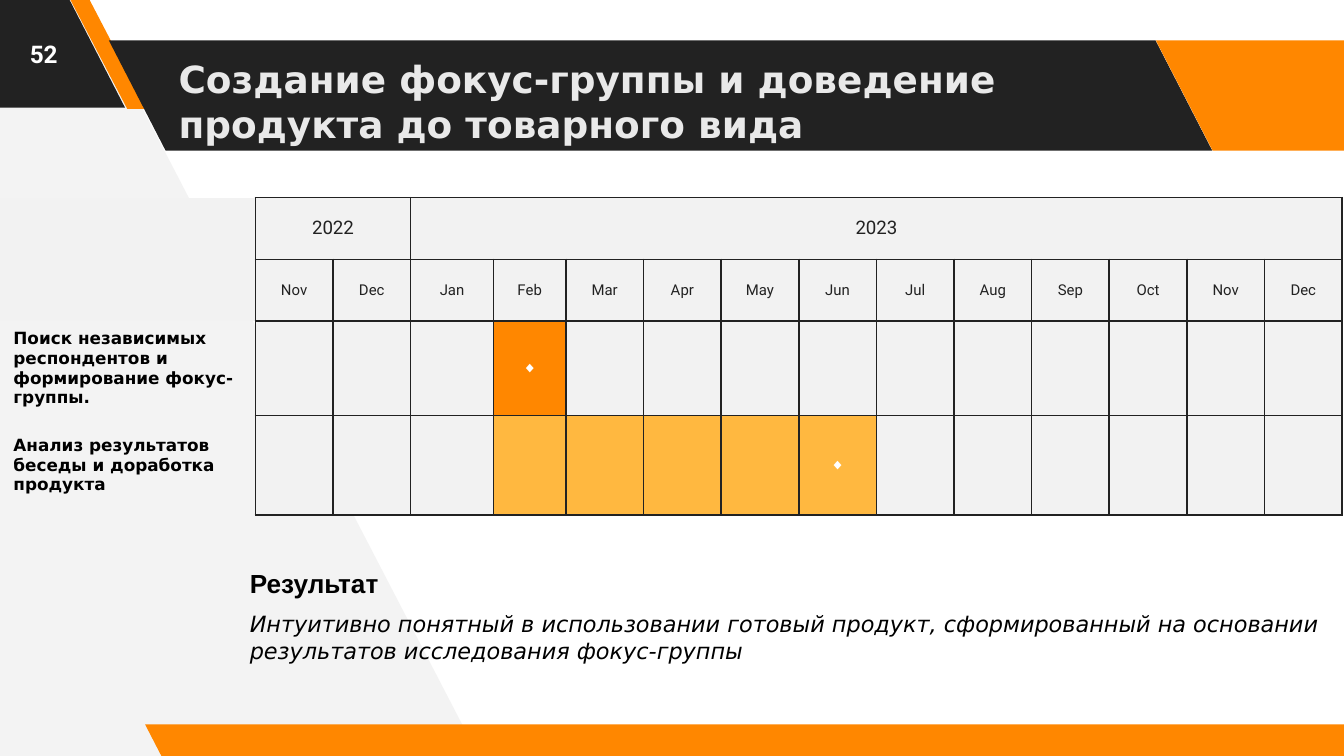
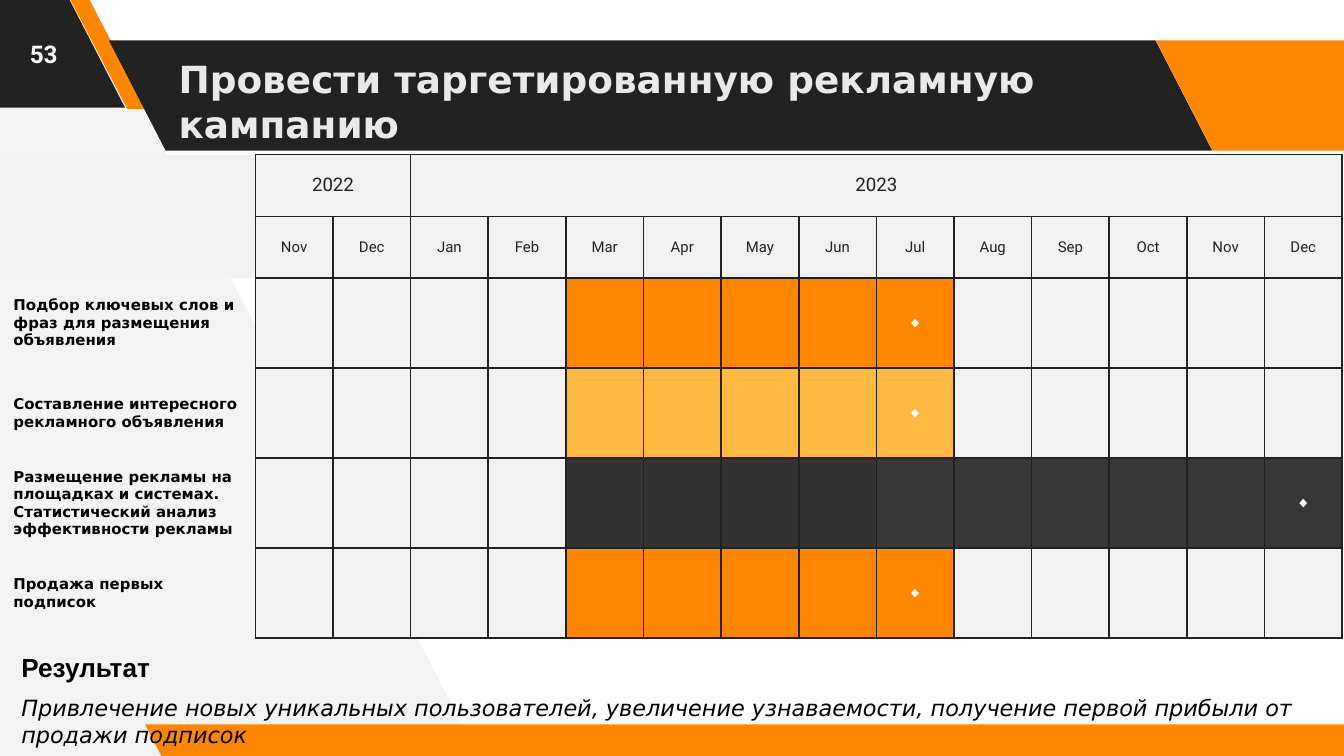
from lxml.etree import SubElement
from pptx import Presentation
from pptx.dml.color import RGBColor
from pptx.enum.shapes import MSO_SHAPE
from pptx.enum.text import MSO_ANCHOR, PP_ALIGN
from pptx.oxml.ns import qn
from pptx.util import Inches, Pt

BLACK, DARK, WHITE = "000000", "222222", "FFFFFF"
ORANGE, AMBER, CHARCOAL, SLATE = "FF8700", "FFB840", "333333", "383838"
PANEL, CELL, TITLE = "F3F3F3", "F2F2F2", "E9E9E9"
WIDTH = 10
HEIGHT = WIDTH * 9 / 16
LABEL_WIDTH, TABLE_WIDTH = 1.9, 9.99
HEADER_HEIGHT, TASK_HEIGHT = 0.46, 0.67
MONTHS = "Nov Dec Jan Feb Mar Apr May Jun Jul Aug Sep Oct Nov Dec".split()
MONTH_WIDTH = (TABLE_WIDTH - LABEL_WIDTH) / len(MONTHS)
NO_STYLE_NO_GRID = "{2D5ABB26-0587-4C30-8999-92F81FD0307C}"

# left, top, width, height, slant, colour
BANDS = [
    (-0.99, -0.02, 1.92, 0.82, 0.515, DARK),
    (0.52, -0.01, 0.57, 0.82, 0.75, ORANGE),
    (0.81, 0.3, 8.21, 0.82, 0.515, DARK),
    (8.6, 0.3, 1.92, 0.82, 0.515, ORANGE),
    (1.08, 5.39, 9.15, 0.25, 0.515, ORANGE),
]

# Each task: label, row height, bars as (colour, first column, last column).
# The milestone stands at the end of the last bar.
PLANS = [
    {
        "number": "52",
        "title": "Создание фокус-группы и доведение продукта до товарного вида",
        "table_top": 1.47,
        "label_size": 9,
        "february_shift": 0.04,
        "tasks": [
            ("Поиск независимых респондентов и формирование фокус-группы. ",
             TASK_HEIGHT, [(ORANGE, 4, 4)]),
            ("Анализ результатов беседы и доработка продукта ",
             0.74, [(AMBER, 4, 8)]),
        ],
        "result_box": (1.76, 4.12, 8.78, 1.05),
        "result": "Интуитивно понятный в использовании готовый продукт, "
                  "сформированный на основании результатов исследования фокус-группы",
    },
    {
        "number": "53",
        "title": "Провести таргетированную рекламную кампанию",
        "table_top": 1.15,
        "label_size": 8,
        "february_shift": 0,
        "tasks": [
            ("Подбор ключевых слов и фраз для размещения объявления",
             TASK_HEIGHT, [(ORANGE, 5, 9)]),
            ("Составление интересного рекламного объявления",
             TASK_HEIGHT, [(AMBER, 5, 9)]),
            ("Размещение рекламы на площадках и системах. "
             "Статистический анализ эффективности рекламы",
             TASK_HEIGHT, [(CHARCOAL, 5, 8), (SLATE, 9, 14)]),
            ("Продажа первых подписок", TASK_HEIGHT, [(ORANGE, 5, 9)]),
        ],
        "result_box": (0.06, 4.75, 10.32, 0.66),
        "result": "Привлечение новых уникальных пользователей, увеличение узнаваемости, "
                  "получение первой прибыли от продажи подписок",
    },
]


def rgb(hex_colour):
    return RGBColor.from_string(hex_colour)


def write(paragraph, text, font, size, colour, bold=False, italic=False, align=PP_ALIGN.LEFT):
    paragraph.text = text
    paragraph.alignment = align
    for run in paragraph.runs:
        run.font.name = font
        run.font.size = Pt(size)
        run.font.color.rgb = rgb(colour)
        run.font.bold = bold
        run.font.italic = italic


presentation = Presentation()
presentation.slide_width = Inches(WIDTH)
presentation.slide_height = Inches(HEIGHT)

for plan in PLANS:
    slide = presentation.slides.add_slide(presentation.slide_layouts[6])

    # Background panel and slanted bands
    builder = slide.shapes.build_freeform(Inches(3.56), Inches(HEIGHT))
    corners = [(0.62, -0.04), (-0.06, -0.04), (-0.02, 5.66)]
    builder.add_line_segments([(Inches(x), Inches(y)) for x, y in corners])
    panel = builder.convert_to_shape()
    panel.shadow.inherit = False
    panel.fill.solid()
    panel.fill.fore_color.rgb = rgb(PANEL)
    panel.line.fill.background()

    for *box, slant, colour in BANDS:
        band = slide.shapes.add_shape(MSO_SHAPE.PARALLELOGRAM, *map(Inches, box))
        band.adjustments[0] = slant
        band.element.spPr.find(qn("a:xfrm")).set("flipH", "1")
        band.shadow.inherit = False
        band.fill.solid()
        band.fill.fore_color.rgb = rgb(colour)
        band.line.fill.background()

    # Title, slide number and result
    frames = []
    for box, anchor in [
        ((1.23, 0.34, 7.35, 0.82), MSO_ANCHOR.MIDDLE),
        ((0, 0, 0.65, 0.8), MSO_ANCHOR.MIDDLE),
        (plan["result_box"], MSO_ANCHOR.TOP),
    ]:
        frame = slide.shapes.add_textbox(*map(Inches, box)).text_frame
        frame.word_wrap = True
        frame.vertical_anchor = anchor
        frame.margin_left = frame.margin_right = Inches(0.1)
        frame.margin_top = frame.margin_bottom = Inches(0.1)
        frames.append(frame)
    title, number, result = frames
    write(title.paragraphs[0], plan["title"], "DejaVu Sans", 20, TITLE, bold=True)
    write(number.paragraphs[0], plan["number"], "Roboto", 13, WHITE, bold=True,
          align=PP_ALIGN.CENTER)
    write(result.paragraphs[0], "Результат", "Arial", 14, BLACK, bold=True)
    outcome = result.add_paragraph()
    outcome.space_before = Pt(6)
    write(outcome, plan["result"], "DejaVu Sans", 12, BLACK, italic=True)

    # Schedule grid
    tasks = plan["tasks"]
    heights = [HEADER_HEIGHT] * 2 + [height for _, height, _ in tasks]
    table = slide.shapes.add_table(
        len(heights), len(MONTHS) + 1, 0, Inches(plan["table_top"]),
        Inches(TABLE_WIDTH), Inches(sum(heights))).table
    table.first_row = table.horz_banding = False
    table._tbl.tblPr.find(qn("a:tableStyleId")).text = NO_STYLE_NO_GRID
    widths = [LABEL_WIDTH] + [MONTH_WIDTH] * len(MONTHS)
    widths[3] += plan["february_shift"]
    widths[4] -= plan["february_shift"]
    for column, width in zip(table.columns, widths):
        column.width = Inches(width)
    for row, height in zip(table.rows, heights):
        row.height = Inches(height)

    for row_index, row in enumerate(table.rows):
        for column_index, cell in enumerate(row.cells):
            cell.vertical_anchor = MSO_ANCHOR.MIDDLE
            sides = ["lnL", "lnR", "lnT", "lnB"] if column_index else ["lnR"]
            for side in sides:
                line = SubElement(cell._tc.get_or_add_tcPr(), qn(f"a:{side}"), w=str(Pt(1)))
                fill = SubElement(line, qn("a:solidFill"))
                SubElement(fill, qn("a:srgbClr"), val=DARK)
            if column_index or row_index < 2:
                cell.fill.solid()
                cell.fill.fore_color.rgb = rgb(CELL)
            else:
                cell.fill.background()

    for year, first, last in [("2022", 1, 2), ("2023", 3, 14)]:
        table.cell(0, first).merge(table.cell(0, last))
        write(table.cell(0, first).text_frame.paragraphs[0], year, "Roboto", 10, DARK,
              align=PP_ALIGN.CENTER)
    for column_index, month in enumerate(MONTHS, start=1):
        write(table.cell(1, column_index).text_frame.paragraphs[0], month, "Roboto", 8, DARK,
              align=PP_ALIGN.CENTER)

    # Tasks, bars and milestones
    for row_index, (label, _, bars) in enumerate(tasks, start=2):
        write(table.cell(row_index, 0).text_frame.paragraphs[0], label, "DejaVu Sans",
              plan["label_size"], BLACK, bold=True)
        for colour, first, last in bars:
            for column_index in range(first, last + 1):
                table.cell(row_index, column_index).fill.fore_color.rgb = rgb(colour)
        milestone = table.cell(row_index, bars[-1][2])
        write(milestone.text_frame.paragraphs[0], "◆", "Arial", 8, WHITE,
              align=PP_ALIGN.CENTER)

presentation.save("out.pptx")
